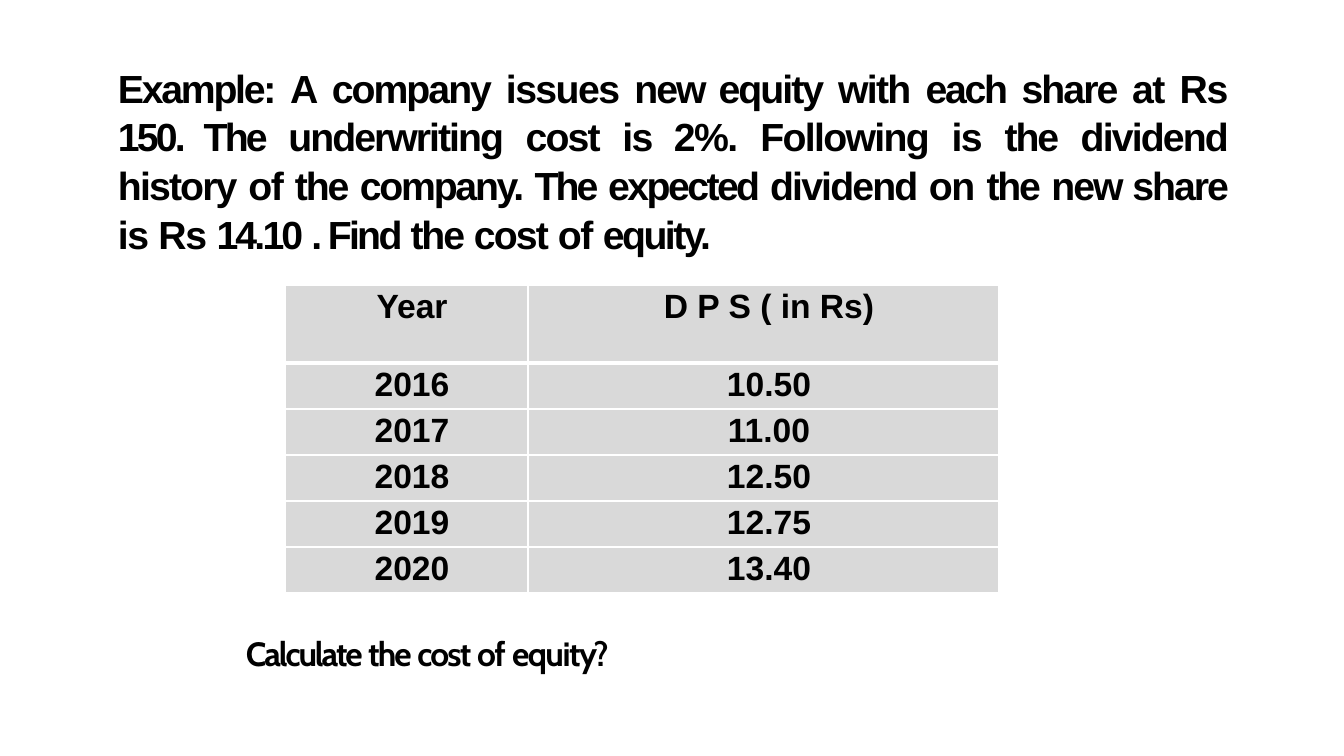
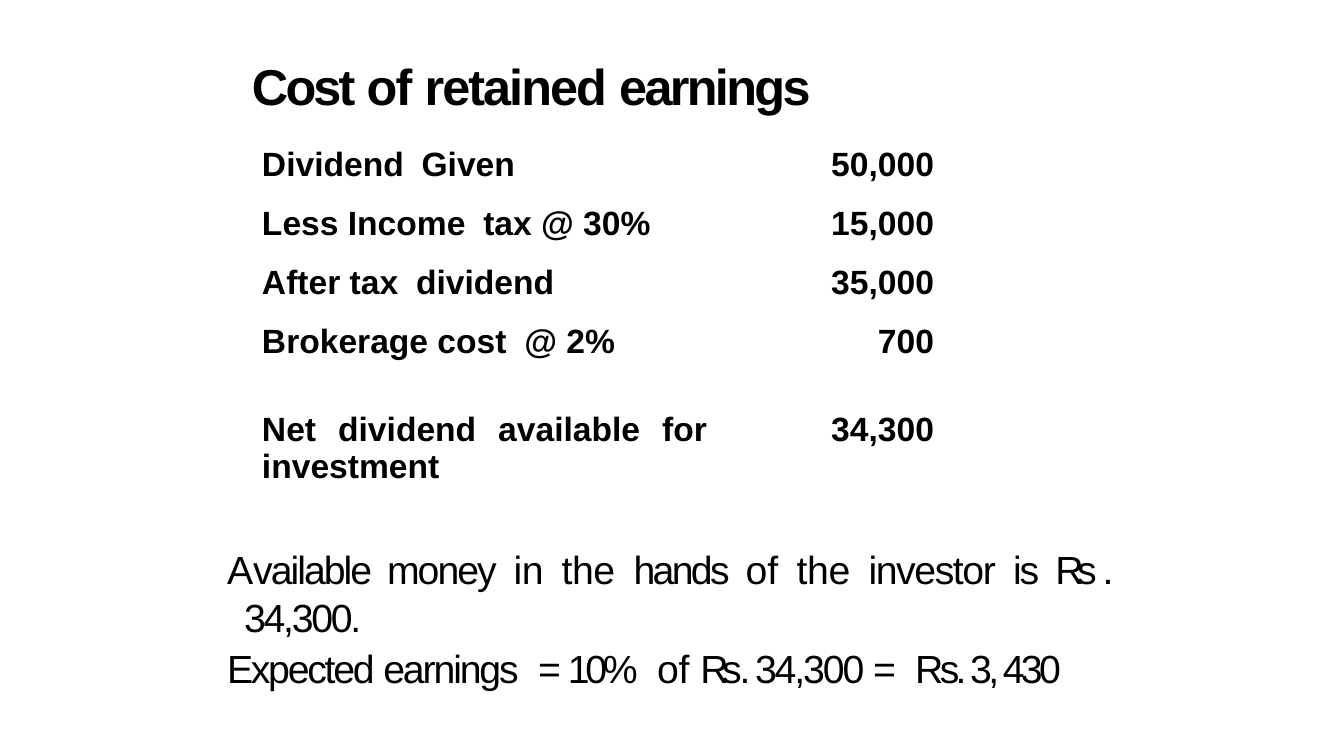
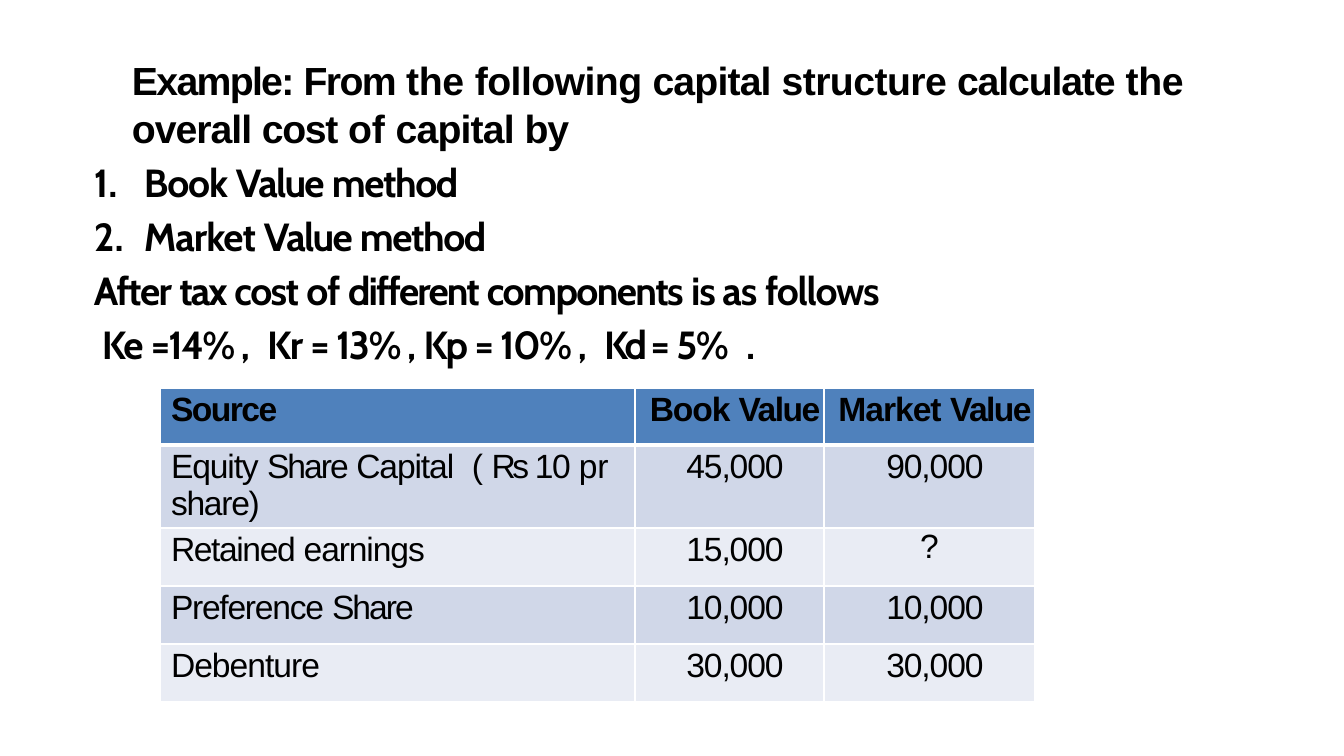
from dataclasses import dataclass

from lxml import etree
from pptx import Presentation
from pptx import util as u
from pptx.dml.color import RGBColor
from pptx.enum import text
from pptx.oxml.ns import qn

EMU_PER_PX = 914400 / 100.8
ALIGN = text.PP_ALIGN


@dataclass(frozen=True)
class Theme:
    ink: str = "000000"
    paper: str = "FFFFFF"
    grey: str = "D9D9D9"
    header: str = "4F81BC"
    bands: tuple = ("D0D7E8", "E9ECF4")
    main_font: str = "Arial"
    accent_font: str = "Cabin"
    title_size: int = 36
    body_size: int = 28
    table_size: int = 24
    body_leading: float = 1.04
    thin_rule: int = 1
    thick_rule: int = 3


THEME = Theme()
WIDE_GAP = (" ", 6)


def px(length):
    return u.Emu(round(length * EMU_PER_PX))


def write(paragraph, spans, size, bold=True, font=THEME.main_font, align=ALIGN.LEFT):
    """Fill a paragraph from (text, letter spacing in points) pairs or a plain string."""
    paragraph.alignment = align
    if isinstance(spans, str):
        spans = [(spans, 0)]
    for words, spacing in spans:
        run = paragraph.add_run()
        run.text = words
        run.font.name = font
        run.font.size = u.Pt(size)
        run.font.bold = bold
        run.font.color.rgb = RGBColor.from_string(THEME.ink)
        run._r.get_or_add_rPr().set("spc", str(round(spacing * 100)))


def indent(paragraph, left, first, numbered=False):
    properties = paragraph._p.get_or_add_pPr()
    properties.set("marL", str(px(left)))
    properties.set("indent", str(px(first)))
    if numbered:
        font = etree.SubElement(properties, qn("a:buFont"))
        font.set("typeface", THEME.accent_font)
        number = etree.SubElement(properties, qn("a:buAutoNum"))
        number.set("type", "arabicPeriod")


def prepare_frame(shape, top_inset):
    frame = shape.text_frame
    frame.word_wrap = True
    frame.auto_size = text.MSO_AUTO_SIZE.NONE
    frame.vertical_anchor = text.MSO_ANCHOR.TOP
    frame.margin_left = frame.margin_right = frame.margin_bottom = 0
    frame.margin_top = px(top_inset)
    return frame


def add_text_frame(slide, box, top_inset):
    return prepare_frame(slide.shapes.add_textbox(*map(px, box)), top_inset)


def next_paragraph(frame, space_before):
    paragraph = frame.add_paragraph()
    paragraph.space_before = u.Pt(space_before)
    return paragraph


def set_borders(cell, top, bottom):
    properties = cell._tc.get_or_add_tcPr()
    widths = (("L", THEME.thin_rule), ("R", THEME.thin_rule), ("T", top), ("B", bottom))
    for position, (side, width) in enumerate(widths):
        line = etree.Element(qn(f"a:ln{side}"), w=str(u.Pt(width)))
        fill = etree.SubElement(line, qn("a:solidFill"))
        etree.SubElement(fill, qn("a:srgbClr")).set("val", THEME.paper)
        properties.insert(position, line)


def add_table(slide, left, top, widths, heights, rows, fills, aligns,
              right_insets, body_bold=True):
    """Draw a table; fills holds the header colour, then the colours body rows cycle through."""
    frame = slide.shapes.add_table(len(rows), len(widths), px(left), px(top),
                                   px(sum(widths)), px(sum(heights)))
    table = frame.table
    table.first_row = table.horz_banding = False
    for column, width in zip(table.columns, widths):
        column.width = px(width)
    for row, height in zip(table.rows, heights):
        row.height = px(height)
    header_fill, *body_fills = fills
    for r, row in enumerate(rows):
        for c, content in enumerate(row):
            cell = table.cell(r, c)
            cell.margin_left, cell.margin_top = px(11), px(3)
            cell.margin_right, cell.margin_bottom = px(right_insets[c]), 0
            cell.fill.solid()
            color = body_fills[(r - 1) % len(body_fills)] if r else header_fill
            cell.fill.fore_color.rgb = RGBColor.from_string(color)
            set_borders(cell, THEME.thick_rule if r == 1 else THEME.thin_rule,
                        THEME.thick_rule if r == 0 else THEME.thin_rule)
            write(cell.text_frame.paragraphs[0], content, THEME.table_size,
                  bold=body_bold or r == 0, align=aligns[c])
    return table


def add_slide(presentation, layout_name):
    return presentation.slides.add_slide(
        presentation.slide_layouts.get_by_name(layout_name))


def build_cost_of_equity(presentation):
    slide = add_slide(presentation, "Blank")
    question = add_text_frame(slide, (118, 50, 1109, 200), 12).paragraphs[0]
    question.line_spacing = THEME.body_leading
    write(question, [
        ("Example: ", -1.6), ("A ", -0.7), ("company ", -1.4), ("issues ", -1.1),
        ("new equity ", -1.4), ("with ", -1.2), ("each ", -1.6), ("share ", -1.4),
        ("at ", -1.2), ("Rs ", -0.9), ("150. The ", -2), ("underwriting ", -1.4),
        ("cost ", -1.3), ("is 2%. ", -1.1), ("Following ", -1.2), ("is ", -1.1),
        ("the ", -1.5), ("dividend history ", -1.3), ("of ", -1), ("the ", -1.5),
        ("company. ", -1.6), ("The ", -2), ("expected ", -1.8), ("dividend ", -1.3),
        ("on ", -1), ("the ", -1.5), ("new share ", -1.4), ("is ", -1.1), ("Rs ", -1),
        ("14.10 ", -2), (". Find ", -1.9), ("the ", -1.5), ("cost ", -1.3), ("of ", -1),
        ("equity.", -1.8),
    ], THEME.body_size, align=ALIGN.JUSTIFY)

    prompt = add_text_frame(slide, (246, 630, 397, 42), 3).paragraphs[0]
    write(prompt, [("Calculate ", -1.5), ("the ", -1.4), ("cost ", -1.3), ("of ", -1),
                   ("equity?", -1.1)], THEME.table_size, font=THEME.accent_font)

    rows = [("Year", "D P S ( in Rs)"), ("2016", "10.50"), ("2017", "11.00"),
            ("2018", "12.50"), ("2019", "12.75"), ("2020", "13.40")]
    add_table(slide, 285, 285, (243, 471), [78] + [46] * 5, rows,
              (THEME.grey, THEME.grey), [ALIGN.CENTER] * 2, (0, 0))


def build_retained_earnings(presentation):
    slide = add_slide(presentation, "Title Only")
    title = slide.shapes.title
    title.left, title.top, title.width, title.height = map(px, (252, 49, 698, 62))
    write(prepare_frame(title, 6).paragraphs[0],
          [("Cost ", -2), ("of ", -1.3), ("retained ", -1.4), ("earnings", -1.9)],
          THEME.title_size)

    frame = add_text_frame(slide, (225, 539, 882, 145), 4)
    available, expected = frame.paragraphs[0], next_paragraph(frame, 1)
    for paragraph in (available, expected):
        indent(paragraph, 19, -17)
        paragraph.line_spacing = THEME.body_leading
    write(available, [
        ("A", -1.2), ("vailable money ", -1.4), ("in ", -0.4), ("the ", -0.3),
        ("hands ", -1.9), ("of ", -0.1), ("the ", -0.3), ("investor ", -1), ("is ", -1.7),
        ("Rs . ", -4.6), ("34,300.", -1.6),
    ], THEME.body_size, bold=False, align=ALIGN.JUSTIFY)
    write(expected, [
        ("Expected ", -1.6), ("earnings", -1.5), WIDE_GAP, ("= ", -2.8), ("10%", -3),
        WIDE_GAP, ("of ", -0.1), ("Rs . ", -4.6), ("34,300 ", -1.5), ("=", -2.8),
        WIDE_GAP, ("Rs. 3, 430", -2.6),
    ], THEME.body_size, bold=False, align=ALIGN.JUSTIFY)

    rows = [
        ([("Dividend", 0), WIDE_GAP, ("Given", 0)], "50,000"),
        ([("Less Income", 0), WIDE_GAP, ("tax @ 30%", 0)], "15,000"),
        ([("After tax", 0), WIDE_GAP, ("dividend", 0)], "35,000"),
        ([("Brokerage cost", 0), WIDE_GAP, ("@ 2%", 0)], "700"),
        ("Net dividend available for investment", "34,300"),
    ]
    table = add_table(slide, 251, 143, (505, 245), [59] * 3 + [88] * 2, rows,
                      (THEME.paper, THEME.paper), (ALIGN.LEFT, ALIGN.RIGHT), (49, 67))
    table.cell(4, 0).text_frame.paragraphs[0].alignment = ALIGN.JUSTIFY


def build_overall_cost(presentation):
    slide = add_slide(presentation, "Blank")
    frame = add_text_frame(slide, (93, 50, 1142, 315), 4)
    question = frame.paragraphs[0]
    indent(question, 39, 0)
    question.line_spacing = THEME.body_leading
    write(question, [
        ("Example: ", -1.2), ("From ", -1.1), ("the ", -0.2), ("following ", -0.4),
        ("capital ", -0.6), ("structure ", -0.4), ("calculate ", -0.8), ("the ", -0.2),
        ("overall", -0.7), (" cost ", -0.9), ("of ", -0.1), ("capital ", -0.6),
        ("by", -0.8),
    ], THEME.body_size)

    details = [
        (51, -50, True, [("Book ", -0.8), ("Value ", -1.2), ("method", -1)]),
        (51, -50, True, [("Market ", -0.7), ("Value ", -1.2), ("method", -1)]),
        (1, 0, False, [("After ", -1.1), ("tax ", -1.4), ("cost ", -1.1), ("of ", -0.8),
                       ("different ", -1.3), ("components ", -1.1), ("is as ", -0.8),
                       ("follows", -0.9)]),
        (39, -30, False, [("Ke ", -1.1), ("=14% ,", -1.2), WIDE_GAP, ("Kr ", -1.1),
                          ("= ", -1.8), ("13% , ", -1.1), ("Kp ", -1.6), ("= ", -1.8),
                          ("10% ,", -1.1), WIDE_GAP, ("Kd = ", -1.8), ("5%", -0.9),
                          WIDE_GAP, (".", -1.1)]),
    ]
    for left, first, numbered, spans in details:
        paragraph = next_paragraph(frame, 4.8)
        indent(paragraph, left, first, numbered)
        write(paragraph, spans, THEME.body_size, font=THEME.accent_font)

    def amount(figure):
        return [(figure, -0.8)]

    rows = [
        ([("Source", -1.1)], [("Book ", -0.8), ("Value", -1.1)],
         [("Market ", -0.7), ("Value", -1.1)]),
        ([("Equity ", -0.8), ("Share ", -1.4), ("Capital", -0.8), WIDE_GAP, ("( ", -0.6),
          ("Rs ", -2.6), ("10 ", -0.9), ("pr ", -0.2), ("share)", -0.9)],
         amount("45,000"), amount("90,000")),
        ([("Retained ", -1), ("earnings", -0.8)], amount("15,000"), "?"),
        ([("Preference ", -0.9), ("Share", -1.4)], amount("10,000"), amount("10,000")),
        ([("Debenture", -0.7)], amount("30,000"), amount("30,000")),
    ]
    table = add_table(slide, 160, 388, (475, 189, 211), [57, 83] + [58] * 3, rows,
                      (THEME.header, *THEME.bands),
                      (ALIGN.LEFT, ALIGN.CENTER, ALIGN.CENTER), (0, 0, 0),
                      body_bold=False)
    unknown = table.cell(2, 2)
    unknown.margin_left = unknown.margin_top = 0


def main():
    presentation = Presentation()
    presentation.slide_width, presentation.slide_height = px(1344), px(756)
    build_cost_of_equity(presentation)
    build_retained_earnings(presentation)
    build_overall_cost(presentation)
    presentation.save("out.pptx")


if __name__ == "__main__":
    main()
